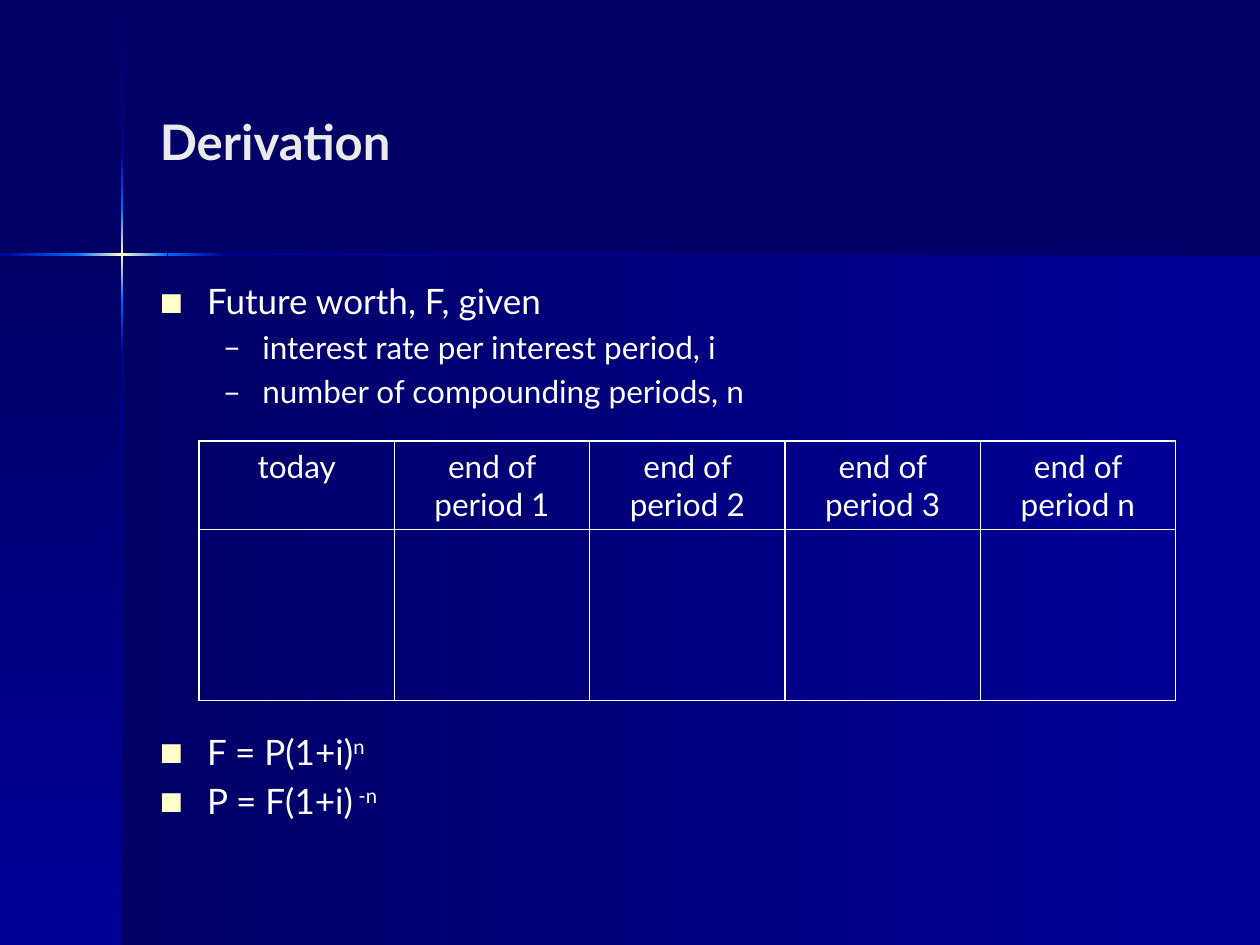
from copy import deepcopy
from dataclasses import dataclass
from typing import NamedTuple

from lxml import etree
from pptx import Presentation
from pptx.dml.color import RGBColor
from pptx.enum.shapes import MSO_SHAPE
from pptx.enum.text import MSO_ANCHOR, PP_ALIGN
from pptx.oxml.ns import qn
from pptx.util import Inches, Pt

RECT = MSO_SHAPE.RECTANGLE
MIDDLE = MSO_ANCHOR.MIDDLE
TOP = MSO_ANCHOR.TOP
CENTER = PP_ALIGN.CENTER
COLS, ROWS = 100, 75


@dataclass(frozen=True)
class Theme:
    font: str = "Lato"
    navy: str = "000066"
    blue: str = "000099"
    bright: str = "0066FF"
    cream: str = "FFFFCC"
    white: str = "FFFFFF"
    pale: str = "EAEAEA"
    title: int = 28
    body: int = 20
    small: int = 18


class Box(NamedTuple):
    x: float
    y: float
    w: float
    h: float


class Band(NamedTuple):
    box: Box
    down: bool
    hues: tuple[str, ...]


class Mark(NamedTuple):
    char: str
    hue: str
    share: int
    left: float
    hang: float


class Line(NamedTuple):
    text: str
    size: int
    mark: Mark
    gap: float
    power: str = ""


T = Theme()
SQUARE = Mark("■", T.cream, 70, 3.75, 3.75)
DASH = Mark("–", T.white, 100, 8.13, 3.13)
GLOW = (T.bright, T.cream, T.bright)

BANDS = [
    Band(Box(9.7, 20.2, 90.3, 54.8), False, (T.navy, T.blue)),
    Band(Box(0, 20.2, 9.7, 54.8), True, (T.navy, T.blue)),
    Band(Box(9.6, 0.1, 0.2, 12), True, (T.navy, T.blue)),
    Band(Box(9.6, 28.2, 0.2, 46.8), True, (T.blue, T.navy)),
    Band(Box(17.7, 20.1, 82.3, 0.2), False, (T.blue, T.navy)),
    Band(Box(9.6, 23.8, 0.2, 4.4), True, (T.bright, T.blue)),
    Band(Box(9.6, 12.1, 0.2, 4.4), True, (T.blue, T.bright)),
    Band(Box(9.6, 16.5, 0.2, 7.3), True, GLOW),
    Band(Box(0, 20.1, 6.1, 0.2), False, (T.blue, T.bright)),
    Band(Box(13.3, 20.1, 4.4, 0.2), False, (T.bright, T.blue)),
    Band(Box(6, 20.1, 7.3, 0.2), False, GLOW),
]
LINES = [
    Line("Future worth, F, given", T.body, SQUARE, 0),
    Line("interest rate per interest period, i", T.small, DASH, 3.6),
    Line("number of compounding periods, n", T.small, DASH, 3.6),
    Line("F = P(1+i)", T.body, SQUARE, 183.2, "n"),
    Line("P = F(1+i)", T.body, SQUARE, 4, " -n"),
]
HEADS = ["today"] + [f"end of period {k}" for k in ("1", "2", "3", "n")]

deck = Presentation()
deck.slide_width, deck.slide_height = Inches(10), Inches(7.5)
slide = deck.slides.add_slide(deck.slide_layouts[6])


def place(box: Box) -> tuple[int, int, int, int]:
    col, row = deck.slide_width / COLS, deck.slide_height / ROWS
    return (round(box.x * col), round(box.y * row),
            round(box.w * col), round(box.h * row))


def add_run(para, text: str, size: int, hue: str, bold=False, lift=0) -> None:
    run = para.add_run()
    run.text = text
    font = run.font
    font.name, font.size, font.bold = T.font, Pt(size), bold
    font.color.rgb = RGBColor.from_string(hue)
    if lift:
        font._element.set("baseline", str(lift * 1000))


def add_band(band: Band) -> None:
    shape = slide.shapes.add_shape(RECT, *place(band.box))
    shape.shadow.inherit = False
    shape.line.fill.background()
    fill = shape.fill
    fill.gradient()
    fill.gradient_angle = 270 if band.down else 0
    stops = shape.element.spPr.find(".//" + qn("a:gsLst"))
    for _ in band.hues[2:]:
        stops.insert(1, deepcopy(stops[0]))
    last = len(band.hues) - 1
    for k, (stop, hue) in enumerate(zip(fill.gradient_stops, band.hues)):
        stop.position = k / last
        stop.color.rgb = RGBColor.from_string(hue)


def add_box(box: Box, anchor):
    frame = slide.shapes.add_textbox(*place(box)).text_frame
    frame.word_wrap = True
    frame.vertical_anchor = anchor
    return frame


def set_mark(para, mark: Mark) -> None:
    props = para._p.get_or_add_pPr()
    props.set("marL", str(Inches(mark.left / 10)))
    props.set("indent", str(-Inches(mark.hang / 10)))
    hue = etree.SubElement(props, qn("a:buClr"))
    etree.SubElement(hue, qn("a:srgbClr"), val=mark.hue)
    etree.SubElement(props, qn("a:buSzPct"), val=str(mark.share * 1000))
    etree.SubElement(props, qn("a:buFont"), typeface=T.font)
    etree.SubElement(props, qn("a:buChar"), char=mark.char)


def add_line(para, line: Line) -> None:
    para.space_before = Pt(line.gap)
    set_mark(para, line.mark)
    add_run(para, line.text, line.size, T.white)
    if line.power:
        add_run(para, line.power, line.size, T.white, lift=30)


def set_edges(cell) -> None:
    props = cell._tc.get_or_add_tcPr()
    for k, side in enumerate(("lnL", "lnR", "lnT", "lnB")):
        edge = etree.Element(qn("a:" + side), w=str(Pt(1)))
        fill = etree.SubElement(edge, qn("a:solidFill"))
        etree.SubElement(fill, qn("a:srgbClr"), val=T.white)
        props.insert(k, edge)


def add_grid(box: Box, heads: list[str], rows: tuple[float, ...]) -> None:
    grid = slide.shapes.add_table(len(rows), len(heads), *place(box)).table
    grid.first_row = grid.horz_banding = False
    for row, high in zip(grid.rows, rows):
        row.height = round(high * deck.slide_height / ROWS)
    for cell in grid.iter_cells():
        cell.fill.background()
        set_edges(cell)
    for k, head in enumerate(heads):
        para = grid.cell(0, k).text_frame.paragraphs[0]
        para.alignment = CENTER
        add_run(para, head, T.small, T.white)


def main() -> None:
    back = slide.background.fill
    back.solid()
    back.fore_color.rgb = RGBColor.from_string(T.navy)
    for band in BANDS:
        add_band(band)
    title = add_box(Box(11.7, 3.3, 82.5, 15.7), MIDDLE)
    add_run(title.paragraphs[0], "Derivation", T.title, T.pale, bold=True)
    body = add_box(Box(11.7, 21.7, 82.5, 45), TOP)
    for k, line in enumerate(LINES):
        add_line(body.add_paragraph() if k else body.paragraphs[0], line)
    add_grid(Box(15.8, 35, 77.5, 20.6), HEADS, (7, 13.6))
    deck.save("out.pptx")


if __name__ == "__main__":
    main()
